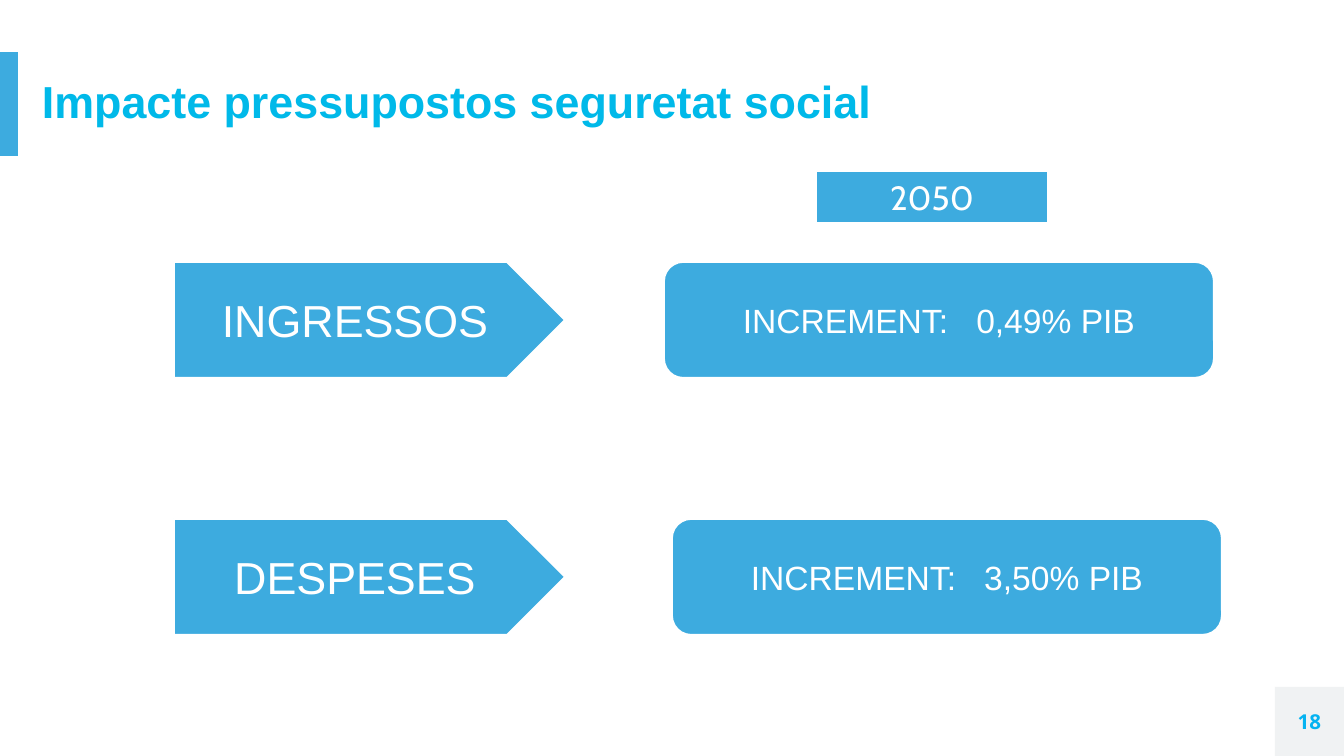
from dataclasses import dataclass

from pptx import Presentation
from pptx.dml.color import RGBColor
from pptx.enum.shapes import MSO_SHAPE as Shape
from pptx.enum.text import MSO_ANCHOR as Anchor, PP_ALIGN as Align
from pptx.util import Pt

PX = 914400 / 134.4


@dataclass(frozen=True)
class Theme:
    blue: str = "3DABDF"
    title: str = "00B9E9"
    number: str = "05B3F1"
    corner: str = "F0F2F3"
    white: str = "FFFFFF"
    sans: str = "Arial"
    year_font: str = "Cabin"
    number_font: str = "Open Sans"
    large: int = 24
    medium: int = 18
    small: int = 11
    outline: int = 1
    value_gap: int = 10


THEME = Theme()


def px(*lengths):
    return [round(length * PX) for length in lengths]


def add_panel(slide, preset, box, fill, outline=None):
    panel = slide.shapes.add_shape(preset, *px(*box))
    panel.shadow.inherit = False
    panel.fill.solid()
    panel.fill.fore_color.rgb = RGBColor.from_string(fill)
    if outline:
        panel.line.color.rgb = RGBColor.from_string(outline)
        panel.line.width = Pt(THEME.outline)
    else:
        panel.line.fill.background()
    return panel


def write(holder, words, size, color, font=THEME.sans, bold=False,
          align=Align.CENTER, margin=None, line_spacing=None, gap=0):
    """Set one paragraph, one run per word group; gap widens single-space runs."""
    frame = holder.text_frame
    frame.word_wrap = True
    frame.vertical_anchor = Anchor.MIDDLE
    if margin is not None:
        frame.margin_left = frame.margin_right = margin
        frame.margin_top = frame.margin_bottom = margin
    paragraph = frame.paragraphs[0]
    paragraph.alignment = align
    if line_spacing:
        paragraph.line_spacing = line_spacing
    for word in words:
        run = paragraph.add_run()
        run.text = word
        run.font.name = font
        run.font.size = Pt(size)
        run.font.bold = bold
        run.font.color.rgb = RGBColor.from_string(color)
        if word == " ":
            run._r.get_or_add_rPr().set("spc", str(gap * 100))


def draw_header(slide, box, title):
    left, top, width, height = box
    add_panel(slide, Shape.RECTANGLE, (left, top, 18, height), THEME.blue)
    heading = slide.shapes.add_textbox(*px(left + 42, top, width - 98, height))
    write(heading, [title], THEME.large, THEME.title, bold=True,
          align=Align.LEFT, margin=0, line_spacing=0.9)


def draw_page_number(slide, box, number):
    corner = add_panel(slide, Shape.RECTANGLE, box, THEME.corner)
    write(corner, [number], THEME.small, THEME.number, THEME.number_font,
          bold=True, margin=0)


def draw_year(slide, box, year):
    label = add_panel(slide, Shape.RECTANGLE, box, THEME.blue, THEME.white)
    write(label, [year], THEME.medium, THEME.white, THEME.year_font)


def draw_budget_row(slide, box, budget, increase):
    """Arrow with the budget side at the left, its increase at the right edge."""
    left, top, width, height = box
    arrow_width, increase_width = 391, 550
    arrow = add_panel(slide, Shape.PENTAGON, (left, top, arrow_width, height),
                      THEME.blue, THEME.white)
    write(arrow, [budget], THEME.large, THEME.white)
    result = add_panel(
        slide, Shape.ROUNDED_RECTANGLE,
        (left + width - increase_width, top, increase_width, height),
        THEME.blue, THEME.white)
    write(result, ["INCREMENT:", " ", increase], THEME.medium, THEME.white,
          gap=THEME.value_gap)


def main():
    deck = Presentation()
    deck.slide_width, deck.slide_height = px(1344, 756)
    slide = deck.slides.add_slide(deck.slide_layouts[6])
    draw_header(slide, (0, 52, 1344, 104), "Impacte pressupostos seguretat social")
    draw_page_number(slide, (1275, 687, 69, 69), "18")
    draw_year(slide, (816, 171, 232, 52), "2050")
    draw_budget_row(slide, (174, 262, 1040, 116), "INGRESSOS", "0,49% PIB")
    draw_budget_row(slide, (174, 519, 1048, 116), "DESPESES", "3,50% PIB")
    deck.save("out.pptx")


if __name__ == "__main__":
    main()
